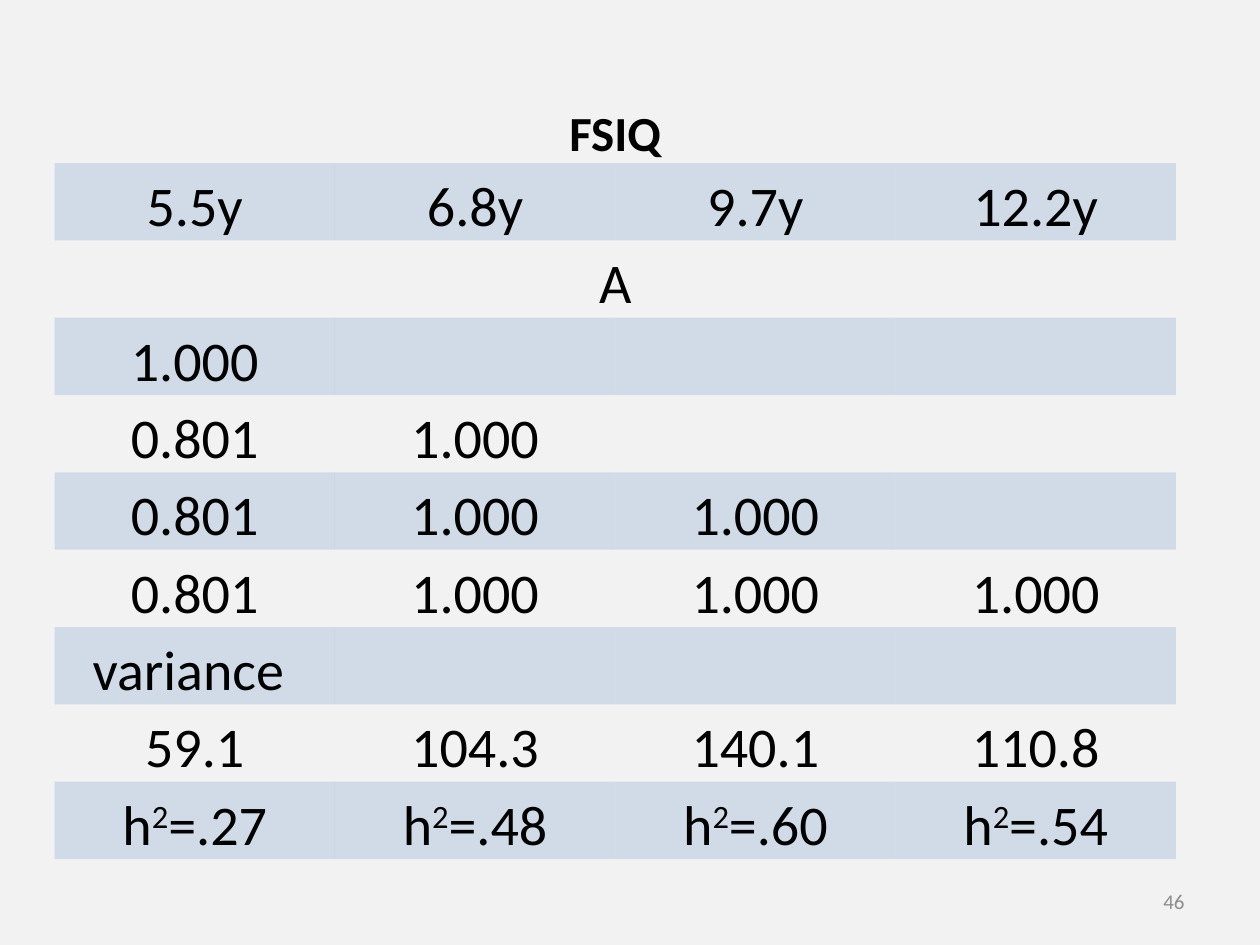
from lxml import etree
from pptx import Presentation
from pptx.dml.color import RGBColor
from pptx.enum.text import MSO_ANCHOR, PP_ALIGN
from pptx.oxml.ns import qn
from pptx.util import Pt

CENTER, RIGHT = PP_ALIGN.CENTER, PP_ALIGN.RIGHT
MIDDLE = MSO_ANCHOR.MIDDLE

PAPER = RGBColor(0xF2, 0xF2, 0xF2)
BLACK = RGBColor(0, 0, 0)
GRAY = RGBColor(0x8C, 0x8C, 0x8C)
BAND = RGBColor(0x4F, 0x81, 0xBD)

FONT = "Calibri"
NO_GRID_STYLE = "{2D5ABB26-0587-4C30-8999-92F81FD0307C}"
BAND_ALPHA = 20000
SUPERSCRIPT = 30000
ROW_HEIGHT = 36.7
CELL_MARGINS = {"margin_left": Pt(5), "margin_right": Pt(5),
                "margin_top": 0, "margin_bottom": 0}
TABLE_FLAGS = {"first_row": False, "horz_banding": False}

ROWS = [
    ["FSIQ"],
    ["5.5y", "6.8y", "9.7y", "12.2y"],
    ["A"],
    ["1.000"],
    ["0.801", "1.000"],
    ["0.801", "1.000", "1.000"],
    ["0.801", "1.000", "1.000", "1.000"],
    ["variance "],
    ["59.1", "104.3", "140.1", "110.8"],
    ["h^2^=.27", "h^2^=.48", "h^2^=.60", "h^2^=.54"],
]
MERGED_ROWS = (0, 2)
COLUMNS = 4


def add_run(p, text, size, color=BLACK, bold=False):
    r = p.add_run()
    r.text = text
    for name, value in {"name": FONT, "size": Pt(size), "bold": bold}.items():
        setattr(r.font, name, value)
    r.font.color.rgb = color
    return r


def fill_cell(cell, text, size, banded):
    for name, value in CELL_MARGINS.items():
        setattr(cell, name, value)
    if banded:
        cell.fill.solid()
        cell.fill.fore_color.rgb = BAND
        color = cell._tc.tcPr.find(".//" + qn("a:srgbClr"))
        etree.SubElement(color, qn("a:alpha"), val=str(BAND_ALPHA))
    else:
        cell.fill.background()
    if not text:
        return
    p = cell.text_frame.paragraphs[0]
    p.alignment = CENTER
    p.line_spacing = 1.15
    for i, part in enumerate(text.split("^")):
        r = add_run(p, part, size, bold=size == 28)
        if i % 2:
            r.font._element.set("baseline", str(SUPERSCRIPT))


def add_correlation_table(slide, left, top, width, height):
    s = slide.shapes.add_table(len(ROWS), COLUMNS, Pt(left), Pt(top), Pt(width), Pt(height))
    table = s.table
    for name, value in TABLE_FLAGS.items():
        setattr(table, name, value)
    table._tbl.tblPr.find(qn("a:tableStyleId")).text = NO_GRID_STYLE
    for column in table.columns:
        column.width = Pt(width / COLUMNS)
    for i, values in enumerate(ROWS):
        table.rows[i].height = Pt(ROW_HEIGHT)
        if i in MERGED_ROWS:
            table.cell(i, 0).merge(table.cell(i, COLUMNS - 1))
        for j in range(COLUMNS):
            text = values[j] if j < len(values) else ""
            fill_cell(table.cell(i, j), text, 28 if i == 0 else 32, i % 2 == 1)
    s.height = Pt(height)


def add_page_number(slide, left, top, width, height):
    sp = slide.shapes.add_textbox(Pt(left), Pt(top), Pt(width), Pt(height))
    tf = sp.text_frame
    tf.word_wrap = True
    tf.vertical_anchor = MIDDLE
    p = tf.paragraphs[0]
    p.alignment = RIGHT
    add_run(p, "46", 12, GRAY)


def main():
    prs = Presentation()
    prs.slide_width, prs.slide_height = Pt(720), Pt(540)
    slide = prs.slides.add_slide(prs.slide_layouts[6])
    slide.background.fill.solid()
    slide.background.fill.fore_color.rgb = PAPER
    add_page_number(slide, 516, 500.5, 168, 28.75)
    add_correlation_table(slide, 31.2, 54.5, 640.8, 436.3)
    prs.save("out.pptx")


if __name__ == "__main__":
    main()
